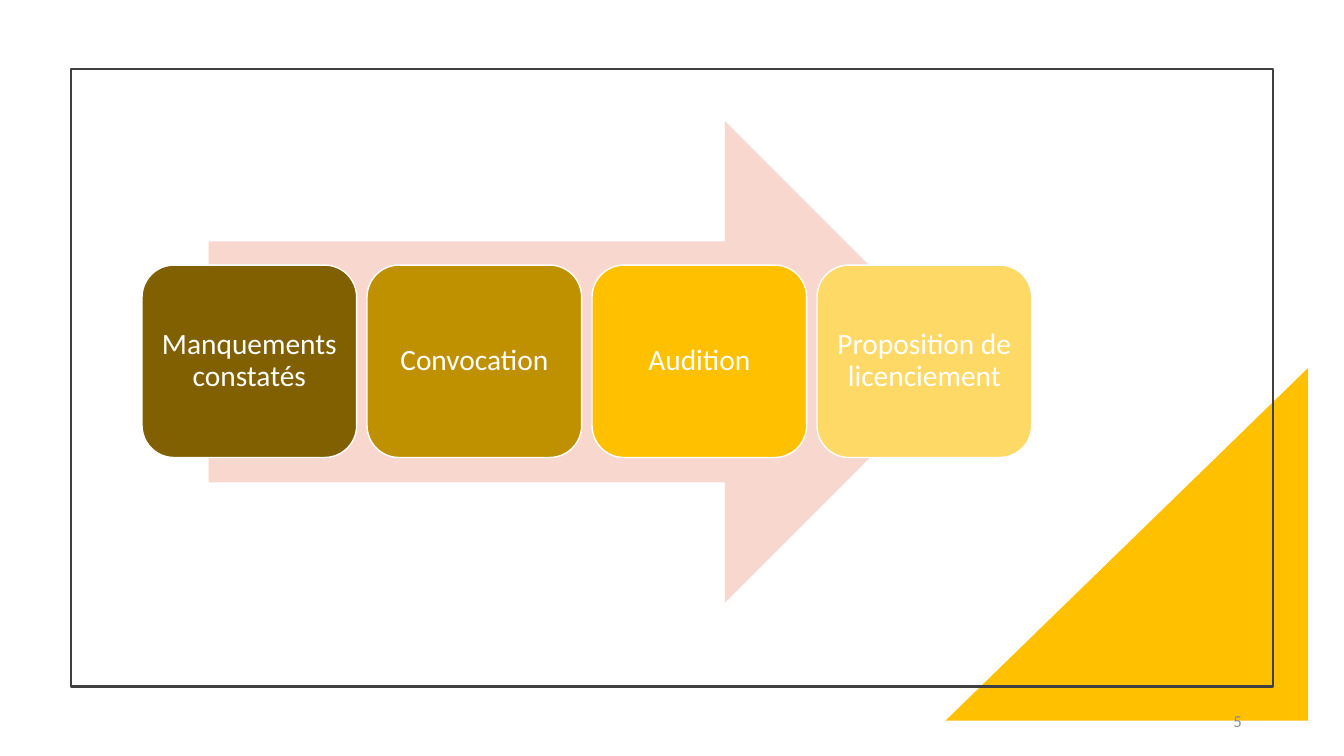
import pptx
import pptx.util
import pptx.dml.color
import pptx.enum.shapes
import pptx.enum.text

Cm, Pt = pptx.util.Cm, pptx.util.Pt
RGBColor = pptx.dml.color.RGBColor
SHAPES = pptx.enum.shapes.MSO_SHAPE
ALIGN = pptx.enum.text.PP_ALIGN

WHITE = RGBColor(0xFF, 0xFF, 0xFF)
FRAME_GREY = RGBColor(0x40, 0x40, 0x40)
NUMBER_GREY = RGBColor(0x8C, 0x8C, 0x8C)
PINK = RGBColor(0xF8, 0xD7, 0xCE)
GOLD = RGBColor(0xFF, 0xC0, 0x00)
DARK_BROWN = RGBColor(0x80, 0x60, 0x00)
BROWN = RGBColor(0xBF, 0x90, 0x00)
LIGHT_GOLD = RGBColor(0xFF, 0xD9, 0x66)

FONT = "Calibri"
STEPS = [
    ("Manquements constatés", DARK_BROWN),
    ("Convocation", BROWN),
    ("Audition", GOLD),
    ("Proposition de licenciement", LIGHT_GOLD),
]
STEP_LEFT, STEP_TOP, STEP_PITCH = 3.58, 6.68, 5.67
STEP_WIDTH, STEP_HEIGHT = 5.41, 4.85


def add_figure(shapes, kind, left, top, width, height, fill=None, line=None, weight=1):
    """Add a preset shape, measured in centimetres."""
    shape = shapes.add_shape(kind, Cm(left), Cm(top), Cm(width), Cm(height))
    shape.shadow.inherit = False
    if fill is None:
        shape.fill.background()
    else:
        shape.fill.solid()
        shape.fill.fore_color.rgb = fill
    if line is None:
        shape.line.fill.background()
    else:
        shape.line.color.rgb = line
        shape.line.width = Pt(weight)
    return shape


def write_text(shape, text, size, color, alignment):
    text_frame = shape.text_frame
    text_frame.word_wrap = True
    text_frame.vertical_anchor = pptx.enum.text.MSO_ANCHOR.MIDDLE
    text_frame.text = text
    paragraph = text_frame.paragraphs[0]
    paragraph.alignment = alignment
    font = paragraph.runs[0].font
    font.name, font.size, font.color.rgb = FONT, Pt(size), color
    return text_frame


def add_step(shapes, index, text, fill):
    step = add_figure(shapes, SHAPES.ROUNDED_RECTANGLE, STEP_LEFT + index * STEP_PITCH,
                      STEP_TOP, STEP_WIDTH, STEP_HEIGHT, fill, WHITE)
    text_frame = write_text(step, text, 21, WHITE, ALIGN.CENTER)
    text_frame.margin_left = text_frame.margin_right = Cm(0.23)
    text_frame.margin_top = text_frame.margin_bottom = Cm(0.23)
    text_frame.paragraphs[0].line_spacing = 0.9


def main():
    presentation = pptx.Presentation()
    presentation.slide_width, presentation.slide_height = Cm(33.87), Cm(19.05)
    slide = presentation.slides.add_slide(presentation.slide_layouts[6])

    # Corner triangle and frame
    triangle = add_figure(slide.shapes, SHAPES.RIGHT_TRIANGLE, 23.83, 9.27, 9.14, 8.89, GOLD)
    triangle._element.spPr.xfrm.set("flipH", "1")
    add_figure(slide.shapes, SHAPES.RECTANGLE, 1.78, 1.73, 30.3, 15.57,
               line=FRAME_GREY, weight=1.5)

    # Process arrow with its steps
    process = slide.shapes.add_group_shape()
    add_figure(process.shapes, SHAPES.RIGHT_ARROW, 5.26, 3.05, 19.08, 12.14, PINK)
    for index, (text, fill) in enumerate(STEPS):
        add_step(process.shapes, index, text, fill)

    # Slide number
    number = slide.shapes.add_textbox(Cm(23.93), Cm(17.65), Cm(7.62), Cm(1.02))
    write_text(number, "5", 12, NUMBER_GREY, ALIGN.RIGHT)

    presentation.save("out.pptx")


if __name__ == "__main__":
    main()
